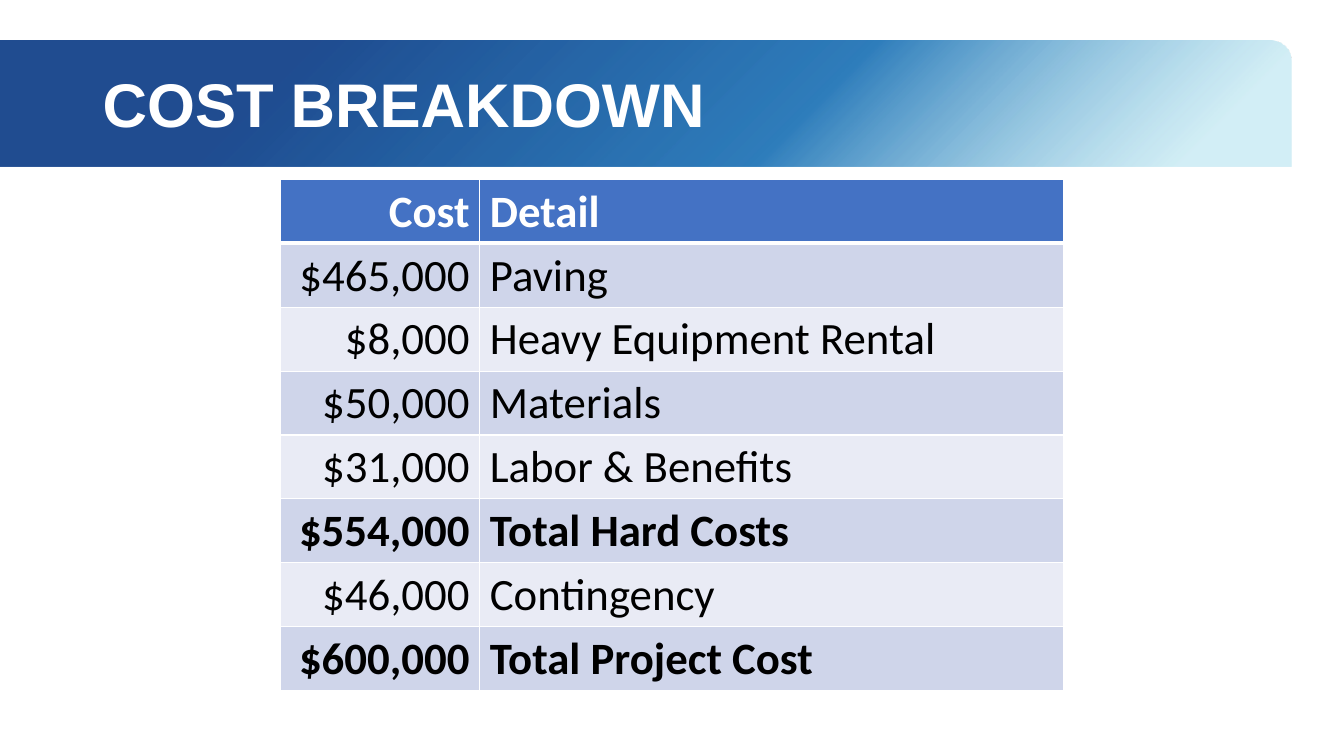
from lxml import etree
from pptx import Presentation
from pptx.dml.color import RGBColor
from pptx.enum import shapes, text
from pptx.oxml import ns
from pptx.util import Pt

TITLE = "COST BREAKDOWN"
COSTS = [  # cost, detail, bold
    ("Cost", "Detail", True),
    ("$465,000", "Paving", False),
    ("$8,000", "Heavy Equipment Rental", False),
    ("$50,000", "Materials", False),
    ("$31,000", "Labor & Benefits", False),
    ("$554,000", "Total Hard Costs", True),
    ("$46,000", "Contingency", False),
    ("$600,000", "Total Project Cost", True),
]
BANNER_STOPS = [(22, "204C90", 100), (62, "0966AF", 84), (92, "97D8E9", 42)]  # position, colour, opacity
COLUMN_WIDTHS = (142.56, 416.88)
ROW_HEIGHT = 45.6
HEADER_FILL, BAND_FILLS = "4472C4", ("E9EBF5", "CFD5EA")
WHITE, BLACK = "FFFFFF", "000000"


def color(hex_value):
    return RGBColor.from_string(hex_value)


def add_element(parent, tag, **attributes):
    element = etree.SubElement(parent, ns.qn(tag))
    for name, value in attributes.items():
        element.set(name, str(value))
    return element


def write(frame, content, size, font, hex_value, bold=False, align=text.PP_ALIGN.LEFT, spacing=None):
    paragraph = frame.paragraphs[0]
    paragraph.alignment = align
    if spacing:
        paragraph.line_spacing = spacing
    run = paragraph.add_run()
    run.text = content
    run.font.size, run.font.name, run.font.bold = Pt(size), font, bold
    run.font.color.rgb = color(hex_value)


def fill_gradient(shape, stops, angle):
    """Replace the shape's fill by a linear gradient with partly transparent stops."""
    shape.fill.gradient()
    gradient = shape._element.spPr.find(ns.qn("a:gradFill"))
    for child in list(gradient):
        gradient.remove(child)
    stop_list = add_element(gradient, "a:gsLst")
    for position, hex_value, opacity in stops:
        stop = add_element(stop_list, "a:gs", pos=position * 1000)
        stop_color = add_element(stop, "a:srgbClr", val=hex_value)
        if opacity < 100:
            add_element(stop_color, "a:alpha", val=opacity * 1000)
    add_element(gradient, "a:lin", ang=angle * 60000, scaled=0)


def set_borders(cell, hex_value, **widths):
    """Draw the borders; widths are in points, by side letter in the order L, R, T, B."""
    properties = cell._tc.get_or_add_tcPr()
    for side, width in widths.items():
        line = add_element(properties, f"a:ln{side}", w=Pt(width))
        add_element(add_element(line, "a:solidFill"), "a:srgbClr", val=hex_value)


def add_banner(slide):
    banner = slide.shapes.add_shape(
        shapes.MSO_SHAPE.ROUND_1_RECTANGLE, Pt(0), Pt(28.8), Pt(922.32), Pt(90))
    banner.shadow.inherit = False
    banner.line.fill.background()
    fill_gradient(banner, BANNER_STOPS, 45)

    title = slide.shapes.add_textbox(Pt(66.24), Pt(53.28), Pt(828), Pt(47.52))
    title.text_frame.word_wrap = True
    title.text_frame.vertical_anchor = text.MSO_ANCHOR.MIDDLE
    write(title.text_frame, TITLE, 44, "Arial", WHITE, bold=True, spacing=0.9)


def add_cost_table(slide):
    table = slide.shapes.add_table(
        len(COSTS), len(COLUMN_WIDTHS), Pt(200.16), Pt(128.16),
        Pt(sum(COLUMN_WIDTHS)), Pt(ROW_HEIGHT * len(COSTS))).table
    for column, width in zip(table.columns, COLUMN_WIDTHS):
        column.width = Pt(width)
    for row, (cost, detail, bold) in enumerate(COSTS):
        table.rows[row].height = Pt(ROW_HEIGHT)
        header = row == 0
        for column, content in enumerate((cost, detail)):
            cell = table.cell(row, column)
            set_borders(cell, WHITE, L=1, R=1, T=3 if row == 1 else 1, B=3 if header else 1)
            cell.fill.solid()
            cell.fill.fore_color.rgb = color(HEADER_FILL if header else BAND_FILLS[row % 2])
            write(cell.text_frame, content, 32, "Calibri", WHITE if header else BLACK, bold=bold,
                  align=text.PP_ALIGN.LEFT if column else text.PP_ALIGN.RIGHT)


def main():
    presentation = Presentation()
    presentation.slide_width, presentation.slide_height = Pt(960), Pt(540)
    slide = presentation.slides.add_slide(presentation.slide_layouts[6])
    add_banner(slide)
    add_cost_table(slide)
    presentation.save("out.pptx")


if __name__ == "__main__":
    main()
